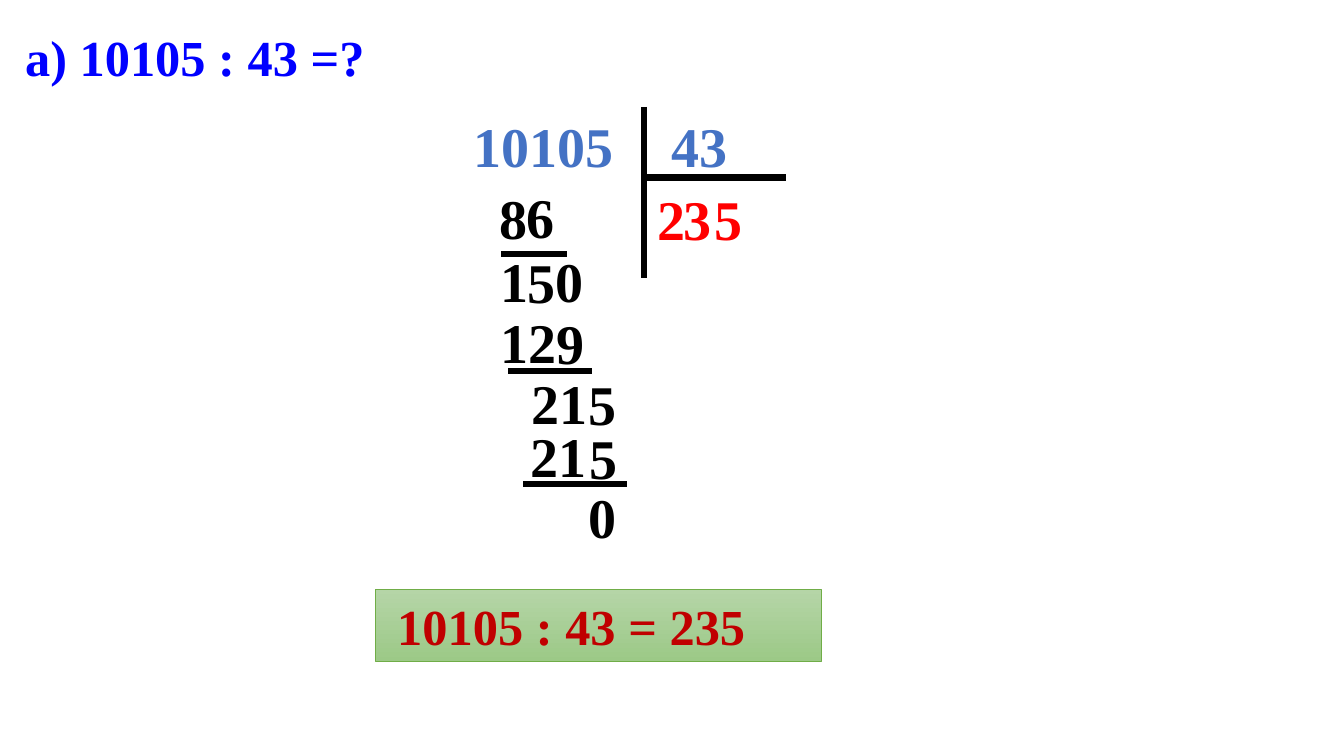
"""Build a slide showing the long division 10105 : 43."""
from dataclasses import dataclass

from lxml import etree
from pptx import Presentation
from pptx.dml.color import RGBColor
from pptx.enum.shapes import MSO_CONNECTOR, MSO_SHAPE
from pptx.enum.text import PP_ALIGN
from pptx.oxml.ns import qn
from pptx.util import Inches, Pt

STRAIGHT = MSO_CONNECTOR.STRAIGHT
RECTANGLE = MSO_SHAPE.RECTANGLE
LEFT = PP_ALIGN.LEFT
FONT = "Times New Roman"
COLORS = {
    "question": "0000FF",
    "given": "4472C4",
    "quotient": "FF0000",
    "work": "000000",
    "answer": "C00000",
    "answer_top": "B5D5A7",
    "answer_bottom": "9CC987",
    "answer_border": "70AD47",
}


@dataclass(frozen=True)
class Label:
    text: str
    left: float
    top: float
    width: float = 0.53
    color: str = "work"
    size: int = 40
    height: float = 0.77


@dataclass(frozen=True)
class Rule:
    x1: float
    y1: float
    x2: float
    y2: float


QUESTION = Label("a) 10105 : 43 =?", 0.15, 0.21, 3.61, "question", 36, 0.71)
ANSWER = Label("10105 : 43 = 235", 3.72, 5.85, 4.43, "answer", 36, 0.71)
DIVISION = [
    Label("10105", 4.6, 1.06, 1.65, "given"),
    Label("43", 6.56, 1.06, 1.05, "given"),
    Rule(6.39, 1.06, 6.39, 2.76),
    Rule(6.41, 1.76, 7.8, 1.76),
    Label("2", 6.42, 1.78, 0.52, "quotient"),
    Label("6", 5.12, 1.76),
    Label("8", 4.86, 1.77),
    Label("3", 6.68, 1.78, 0.52, "quotient"),
    Rule(4.97, 2.52, 5.62, 2.52),
    Label("1", 4.87, 2.4),
    Label("5", 5.13, 2.41),
    Label("5", 5.74, 3.62),
    Label("0", 5.41, 2.4),
    Rule(5.04, 3.68, 5.87, 3.68),
    Label("21", 5.17, 3.61, 0.79),
    Label("9", 5.42, 3.01),
    Label("12", 4.87, 3, 0.82),
    Label("5", 6.99, 1.78, 0.52, "quotient"),
    Label("5", 5.75, 4.15),
    Rule(5.19, 4.8, 6.22, 4.8),
    Label("21", 5.16, 4.13, 0.79),
    Label("0", 5.74, 4.74),
]


def rgb(name: str) -> RGBColor:
    return RGBColor.from_string(COLORS[name])


def write(s, label: Label) -> None:
    tf = s.text_frame
    tf.text = label.text
    tf.word_wrap = True
    p = tf.paragraphs[0]
    p.alignment = LEFT
    font = p.runs[0].font
    font.name = FONT
    font.size = Pt(label.size)
    font.bold = True
    font.color.rgb = rgb(label.color)


def bounds(label: Label) -> list:
    return [Inches(v) for v in (label.left, label.top, label.width, label.height)]


def add_label(slide, label: Label) -> None:
    write(slide.shapes.add_textbox(*bounds(label)), label)


def add_rule(slide, rule: Rule) -> None:
    ends = [Inches(v) for v in (rule.x1, rule.y1, rule.x2, rule.y2)]
    s = slide.shapes.add_connector(STRAIGHT, *ends)
    s.line.color.rgb = rgb("work")
    s.line.width = Pt(4.5)
    etree.SubElement(s._element.spPr, qn("a:effectLst"))


def add_answer(slide, label: Label) -> None:
    s = slide.shapes.add_shape(RECTANGLE, *bounds(label))
    s.shadow.inherit = False
    s.fill.gradient()
    s.fill.gradient_angle = 270
    for stop, name in zip(s.fill.gradient_stops, ("answer_top", "answer_bottom")):
        stop.color.rgb = rgb(name)
    s.line.color.rgb = rgb("answer_border")
    s.line.width = Pt(0.5)
    write(s, label)
    s.text_frame.margin_left = Inches(0.22)


def main() -> None:
    prs = Presentation()
    prs.slide_width, prs.slide_height = Inches(13.33), Inches(7.5)
    slide = prs.slides.add_slide(prs.slide_layouts[6])
    add_label(slide, QUESTION)
    add_answer(slide, ANSWER)
    for part in DIVISION:
        if isinstance(part, Rule):
            add_rule(slide, part)
        else:
            add_label(slide, part)
    prs.save("out.pptx")


if __name__ == "__main__":
    main()
